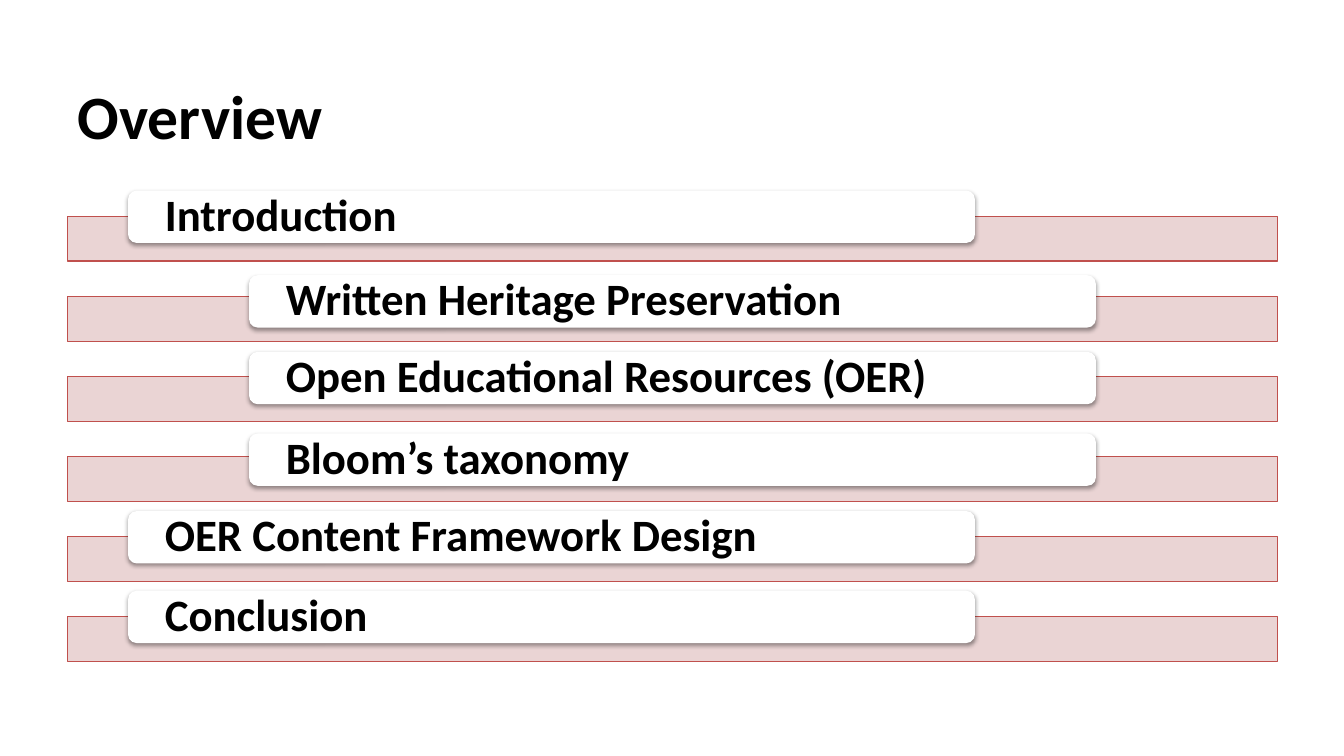
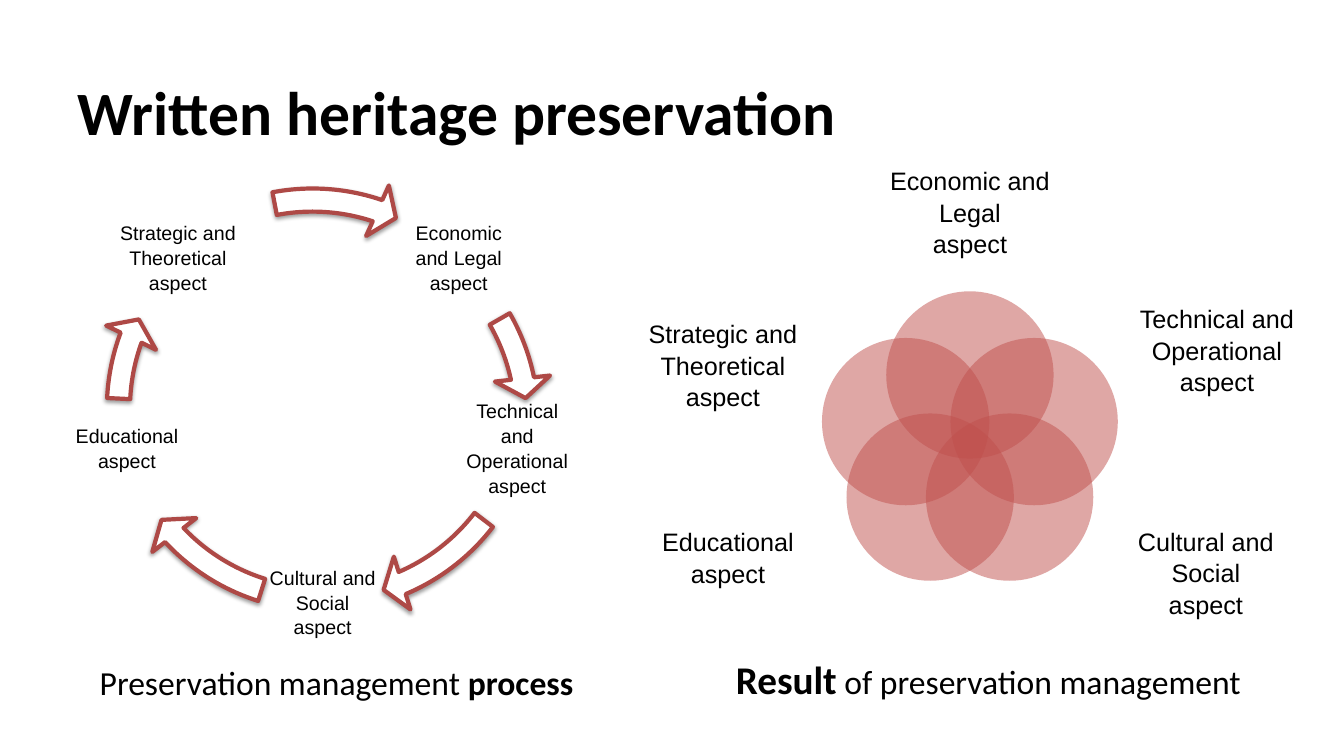
from dataclasses import dataclass
from math import cos, radians, sin

from lxml import etree
from pptx import Presentation
from pptx.dml.color import RGBColor
from pptx.enum.shapes import MSO_SHAPE
from pptx.enum.text import MSO_ANCHOR, PP_ALIGN
from pptx.oxml.ns import qn
from pptx.util import Inches, Pt

RECT, ROUND = MSO_SHAPE.RECTANGLE, MSO_SHAPE.ROUNDED_RECTANGLE
OVAL, ARROW = MSO_SHAPE.OVAL, MSO_SHAPE.CIRCULAR_ARROW
LEFT, CENTER, MIDDLE = PP_ALIGN.LEFT, PP_ALIGN.CENTER, MSO_ANCHOR.MIDDLE


@dataclass(frozen=True)
class Theme:
    # Colours
    ink: str = "000000"
    paper: str = "FFFFFF"
    red: str = "C0504D"
    brick: str = "AE4946"
    blush: str = "E8D0D0"
    # Fonts
    head: str = "Calibri"
    body: str = "Arial"
    # Type sizes
    title: int = 44
    item: int = 32
    strong: int = 28
    plain: int = 24
    label: int = 18
    small: int = 14


class Deck:
    def __init__(self, theme):
        self.theme = theme
        self.prs = Presentation()
        self.prs.slide_width, self.prs.slide_height = Inches(13.33), Inches(7.5)
        self.slide = None

    def box(self, left, top, width, height):
        return Inches(left), Inches(top), Inches(width), Inches(height)

    def style(self, para, font, size, bold=False, align=LEFT):
        para.alignment = align
        para.font.name, para.font.size, para.font.bold = font, Pt(size), bold
        para.font.color.rgb = RGBColor.from_string(self.theme.ink)

    def frame(self, shape, inset):
        frame = shape.text_frame
        frame.word_wrap, frame.vertical_anchor = True, MIDDLE
        frame.margin_left = frame.margin_right = Inches(inset)
        return frame

    def page(self, text, top):
        """Start a slide with its title."""
        self.slide = self.prs.slides.add_slide(self.prs.slide_layouts[5])
        title = self.slide.shapes.title
        title.left, title.top, title.width, title.height = self.box(0.67, top, 12, 1.25)
        frame = self.frame(title, 0.1)
        frame.text = text
        self.style(frame.paragraphs[0], self.theme.head, self.theme.title, True)

    def shape(self, kind, place, fill, line=None, width=0.75, alpha=None, shade=False):
        shape = self.slide.shapes.add_shape(kind, *self.box(*place))
        shape.fill.solid()
        shape.fill.fore_color.rgb = RGBColor.from_string(fill)
        if line:
            shape.line.color.rgb = RGBColor.from_string(line)
            shape.line.width = Pt(width)
        else:
            shape.line.fill.background()
        shape.shadow.inherit = False
        props = shape.element.spPr
        if alpha:
            tint = props.find(qn("a:solidFill")).find(qn("a:srgbClr"))
            self.fade(tint, alpha)
        if shade:
            cast = etree.SubElement(
                props.find(qn("a:effectLst")), qn("a:outerShdw"),
                blurRad=str(Pt(3.1)), dist=str(Pt(1.6)), dir="5400000", rotWithShape="0")
            self.fade(etree.SubElement(cast, qn("a:srgbClr"), val=self.theme.ink), 38)
        return shape

    def fade(self, tint, alpha):
        etree.SubElement(tint, qn("a:alpha"), val=str(alpha * 1000))

    def card(self, text, left, top):
        """A white card with one agenda item."""
        shape = self.shape(ROUND, (left, top, 8.4, 0.52), self.theme.paper, shade=True)
        frame = self.frame(shape, 0.34)
        frame.margin_top = frame.margin_bottom = 0
        frame.text = text
        para = frame.paragraphs[0]
        para.line_spacing = 0.9
        self.style(para, self.theme.head, self.theme.item, True)

    def arrow(self, left, top, start, end):
        """A curved arrow between two angles, in degrees."""
        shape = self.shape(ARROW, (left, top, 4.58, 4.58), self.theme.paper,
                           self.theme.brick, 3, shade=True)
        turn = 0.6  # adjustment units in one degree
        for i, value in enumerate((0.05, 5.59 * turn, end * turn, start * turn, 0.06)):
            shape.adjustments[i] = value

    def label(self, name, place, size):
        """A centred aspect name."""
        text = self.slide.shapes.add_textbox(*self.box(*place))
        frame = self.frame(text, 0.02 if size == self.theme.small else 0)
        frame.margin_top = frame.margin_bottom = 0
        frame.text = f"{name}\naspect"
        for para in frame.paragraphs:
            para.line_spacing = 1.05
            self.style(para, self.theme.body, size, align=CENTER)

    def note(self, parts, place):
        """A caption of (text, size, bold) parts."""
        text = self.slide.shapes.add_textbox(*self.box(*place))
        para = self.frame(text, 0.1).paragraphs[0]
        self.style(para, self.theme.head, self.theme.plain)
        for words, size, bold in parts:
            run = para.add_run()
            run.text, run.font.size, run.font.bold = words, Pt(size), bold


def agenda(deck):
    theme = deck.theme
    deck.page("Overview", 0.51)
    outer, inner = 1.27, 2.47
    items = [
        ("Introduction", outer, 1.89),
        ("Written Heritage Preservation", inner, 2.73),
        ("Open Educational Resources (OER)", inner, 3.49),
        ("Bloom’s taxonomy", inner, 4.3),
        ("OER Content Framework Design", outer, 5.07),
        ("Conclusion", outer, 5.86),
    ]
    first, last = 2.15, 6.12
    step = (last - first) / (len(items) - 1)
    for i, (text, left, top) in enumerate(items):
        deck.shape(RECT, (0.67, first + i * step, 12, 0.44), theme.blush, theme.red, alpha=90)
        deck.card(text, left, top)


def aspects(deck):
    theme = deck.theme
    deck.page("Written heritage preservation", 0.47)

    # Name, place in the cycle, place by the circles
    names = [
        ("Economic and Legal", (3.94, 1.94, 1.22, 1.22), (8.66, 1.54, 1.92, 1.11)),
        ("Technical and Operational", (4.52, 3.83, 1.22, 1.22), (11.21, 2.86, 1.72, 1.21)),
        ("Cultural and Social", (2.59, 5.36, 1.22, 1.22), (11.1, 5.07, 1.72, 1.21)),
        ("Educational", (0.65, 3.83, 1.22, 1.22), (6.36, 4.92, 1.72, 1.21)),
        ("Strategic and Theoretical", (0.81, 1.94, 1.91, 1.22), (6.31, 3.01, 1.72, 1.21)),
    ]
    # Left, top, start angle, end angle
    arrows = [
        (0.92, 1.88, 330.08, 348.14),
        (0.91, 1.64, 37.53, 66.94),
        (0.91, 1.64, 107.47, 136.88),
        (0.9, 1.76, 182.72, 200.32),
        (0.81, 1.71, 259.25, 288.65),
    ]
    mid_x, mid_y, reach, size = 9.62, 4.39, 0.67, 1.66

    # Cycle on the left
    for (name, place, _), arrow in zip(names, arrows):
        deck.label(name, place, theme.small)
        deck.arrow(*arrow)

    # Overlapping circles on the right
    for i, (name, _, place) in enumerate(names):
        angle = radians(i * 360 / len(names))
        left = mid_x + reach * sin(angle) - size / 2
        top = mid_y - reach * cos(angle) - size / 2
        deck.shape(OVAL, (left, top, size, size), theme.red, alpha=50)
        deck.label(name, place, theme.label)

    # Captions
    deck.note([("Preservation management ", theme.plain, False),
               ("process", theme.plain, True)], (0.89, 6.3, 5.09, 0.94))
    deck.note([("Result", theme.strong, True),
               (" of preservation management", theme.plain, False)], (7.2, 6.26, 5.46, 0.94))


def main():
    deck = Deck(Theme())
    agenda(deck)
    aspects(deck)
    deck.prs.save("out.pptx")


if __name__ == "__main__":
    main()
